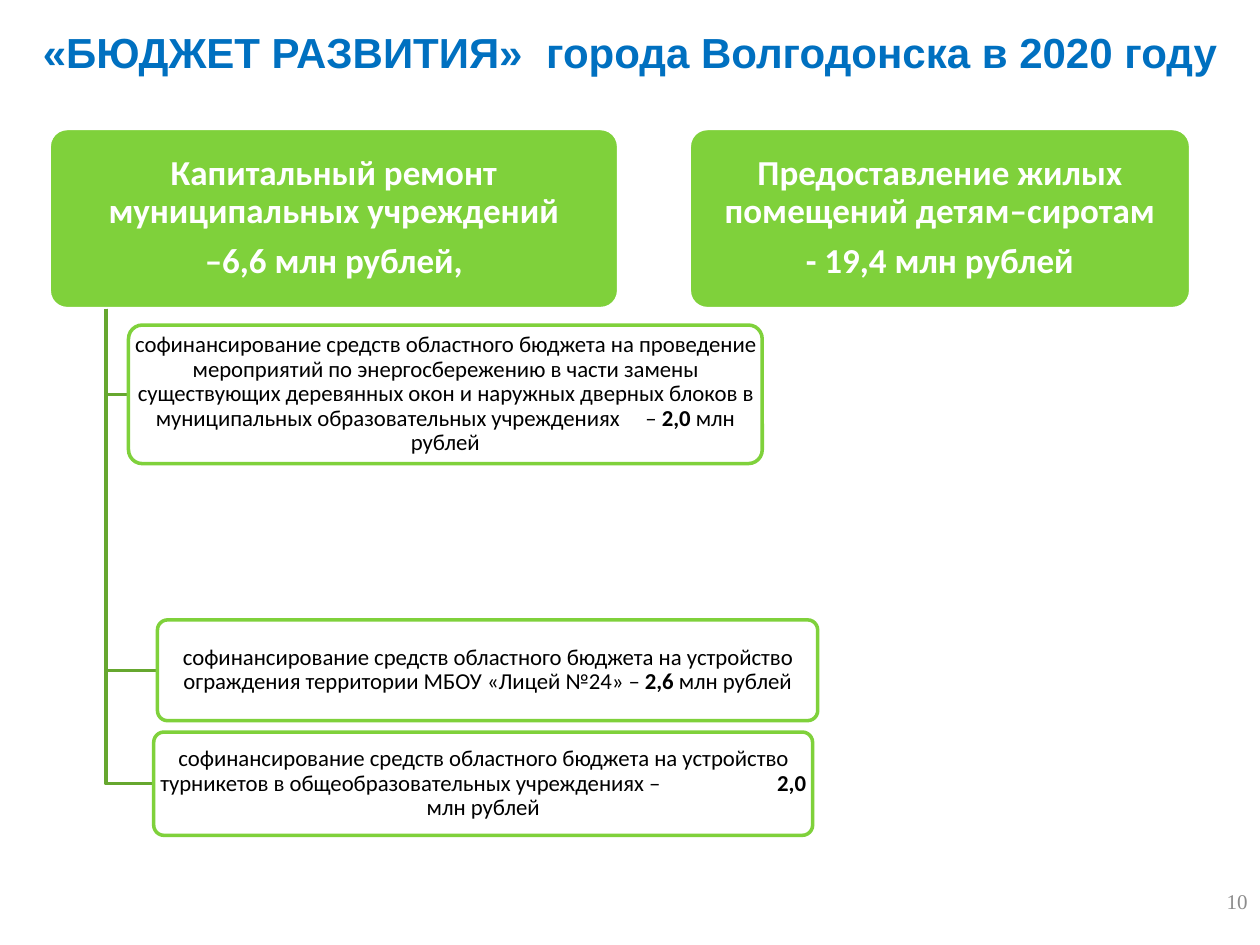
import pptx
import pptx.util
import pptx.dml.color
import pptx.enum.shapes
import pptx.enum.text

In, Pt = pptx.util.Inches, pptx.util.Pt
RGB = pptx.dml.color.RGBColor.from_string
SHAPE = pptx.enum.shapes.MSO_SHAPE
ALIGN = pptx.enum.text.PP_ALIGN
ANCHOR = pptx.enum.text.MSO_ANCHOR

W, H = 10, 7.5
COLORS = {"white": "FFFFFF", "black": "000000", "title": "0070C0",
          "green": "7FD13B", "branch": "66A72F", "number": "8C8C8C"}
FORMATS = {
    "title": {"font": "Arial", "size": 24, "color": "title", "bold": True},
    "head": {"font": "Calibri", "size": 20, "color": "white", "bold": True},
    "item": {"font": "Calibri", "size": 13, "color": "black", "bold": False},
    "number": {"font": "Times New Roman", "size": 12, "color": "number", "bold": False},
}
SMARTART = {"line_spacing": 0.9, "alignment": ALIGN.CENTER}

TITLE = [("«БЮДЖЕТ РАЗВИТИЯ»", {}), (" ", {"gap": 6.7}),
         ("города Волгодонска в 2020 году", {})]
HEAD_TOP, HEAD_HEIGHT = 1.02, 1.43
HEADS = [
    (0.39, 4.52, ["Капитальный ремонт муниципальных учреждений", "–6,6 млн рублей,"]),
    (5.47, 3.98, ["Предоставление жилых помещений детям–сиротам", "- 19,4 млн рублей"]),
]
FUNDING = "софинансирование средств областного бюджета на "
ITEMS = [
    ((1.02, 2.58, 5.03, 1.1), "проведение мероприятий по энергосбережению в части замены "
     "существующих деревянных окон и наружных дверных блоков в муниципальных "
     "образовательных учреждениях", 12, "– ", "2,0 "),
    ((1.25, 4.92, 5.24, 0.8), "устройство ограждения территории МБОУ «Лицей №24»", 0, "– ", "2,6 "),
    ((1.22, 5.81, 5.23, 0.82), "устройство турникетов в общеобразовательных учреждениях –",
     64, "", "2,0 "),
]


def write(tf, paragraphs, style, layout, anchor, margin=0):
    frame = {"word_wrap": True, "vertical_anchor": anchor,
             "auto_size": pptx.enum.text.MSO_AUTO_SIZE.NONE}
    frame.update({"margin_" + side: In(margin) for side in ("left", "top", "right", "bottom")})
    for name, value in frame.items():
        setattr(tf, name, value)
    for i, runs in enumerate(paragraphs):
        p = tf.paragraphs[0] if i == 0 else tf.add_paragraph()
        for name, value in layout.items():
            setattr(p, name, value)
        for text, extra in runs:
            fmt = {**FORMATS[style], **extra}
            r = p.add_run()
            r.text = text
            for name, value in {"name": fmt["font"], "size": Pt(fmt["size"]),
                                "bold": fmt["bold"]}.items():
                setattr(r.font, name, value)
            r.font.color.rgb = RGB(COLORS[fmt["color"]])
            if "gap" in fmt:
                r.font._element.set("spc", str(int(fmt["gap"] * 100)))


def card(s, box, fill, line, paragraphs, style):
    sp = s.shapes.add_shape(SHAPE.ROUNDED_RECTANGLE, *map(In, box))
    sp.adjustments[0] = 0.1
    sp.shadow.inherit = False
    sp.fill.solid()
    sp.fill.fore_color.rgb = RGB(COLORS[fill])
    sp.line.color.rgb = RGB(COLORS[line])
    sp.line.width = Pt(2)
    layout = {**SMARTART, "space_after": Pt(0.35 * FORMATS[style]["size"])}
    write(sp.text_frame, paragraphs, style, layout, ANCHOR.MIDDLE)


def branch(s, x, top, end_x, end_y):
    fb = s.shapes.build_freeform(In(x), In(top))
    fb.add_line_segments([(In(x), In(end_y)), (In(end_x), In(end_y))], close=False)
    sp = fb.convert_to_shape()
    sp.shadow.inherit = False
    sp.fill.background()
    sp.line.color.rgb = RGB(COLORS["branch"])
    sp.line.width = Pt(2)


def main():
    prs = pptx.Presentation()
    prs.slide_width, prs.slide_height = In(W), In(H)
    s = prs.slides.add_slide(prs.slide_layouts[5])

    title = s.shapes.title
    for name, value in zip(("left", "top", "width", "height"), (0, 0.16, W, 0.5)):
        setattr(title, name, In(value))
    write(title.text_frame, [TITLE], "title", {"alignment": ALIGN.CENTER}, ANCHOR.TOP, 0.05)

    for left, width, lines in HEADS:
        card(s, (left, HEAD_TOP, width, HEAD_HEIGHT), "green", "white",
             [[(line, {})] for line in lines], "head")

    trunk = HEADS[0][0] + 0.1 * HEADS[0][1]
    for box, purpose, gap, dash, amount in ITEMS:
        left, top, width, height = box
        branch(s, trunk, HEAD_TOP + HEAD_HEIGHT, left, top + height / 2)
        space = {"gap": gap} if gap else {}
        runs = [(FUNDING + purpose, {}), (" ", space), (dash, {}),
                (amount, {"bold": True}), ("млн рублей", {})]
        card(s, box, "white", "green", [[run for run in runs if run[0]]], "item")

    number = s.shapes.add_textbox(In(W - 0.94), In(6.95), In(0.94), In(0.4))
    write(number.text_frame, [[("10", {})]], "number",
          {"alignment": ALIGN.RIGHT}, ANCHOR.MIDDLE, 0.1)

    prs.save("out.pptx")


if __name__ == "__main__":
    main()
